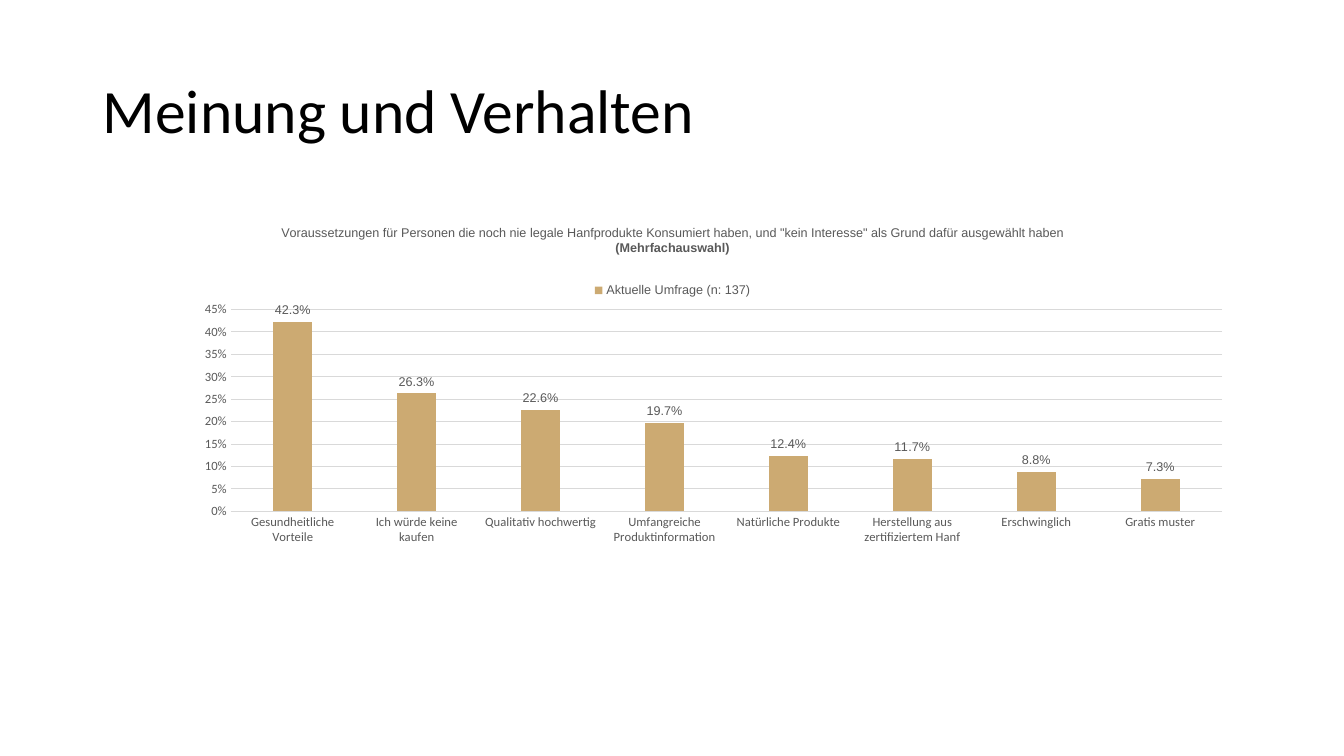
from lxml.etree import SubElement
from pptx import Presentation
from pptx.chart.data import CategoryChartData as ChartData
from pptx.dml.color import RGBColor as Rgb
from pptx.enum.chart import XL_CHART_TYPE as Kind, XL_LABEL_POSITION as Label
from pptx.enum.chart import XL_LEGEND_POSITION as Side, XL_TICK_MARK as Tick
from pptx.enum.text import MSO_ANCHOR as Anchor
from pptx.oxml.ns import qn
from pptx.util import Inches, Pt

COLORS = {"black": "000000", "gray": "595959", "grid": "D9D9D9", "sand": "CCAA72"}

ANSWERS = {
    "Gesundheitliche Vorteile": 0.423,
    "Ich würde keine kaufen": 0.263,
    "Qualitativ hochwertig": 0.226,
    "Umfangreiche Produktinformation": 0.197,
    "Natürliche Produkte": 0.124,
    "Herstellung aus zertifiziertem Hanf": 0.117,
    "Erschwinglich": 0.088,
    "Gratis muster": 0.073,
}
QUESTION = [
    ("Voraussetzungen für Personen die noch nie legale Hanfprodukte Konsumiert haben, "
     'und "kein Interesse" als Grund dafür ausgewählt haben', False),
    ("(Mehrfachauswahl)", True),
]


class Deck:
    head, body = "Calibri", "Arial"

    def __init__(self, prs):
        self.slide = prs.slides.add_slide(prs.slide_layouts[6])

    def color(self, name):
        return Rgb.from_string(COLORS[name])

    def font(self, font, size, name, color, bold=False):
        font.size, font.name, font.bold = Pt(size), name, bold
        font.color.rgb = self.color(color)

    def rule(self, line):
        line.width = Pt(0.75)
        line.color.rgb = self.color("grid")

    def title(self, text, x, y, w, h):
        box = self.slide.shapes.add_textbox(Inches(x), Inches(y), Inches(w), Inches(h))
        frame = box.text_frame
        frame.word_wrap = True
        frame.vertical_anchor = Anchor.MIDDLE
        para = frame.paragraphs[0]
        para.line_spacing = 0.9
        run = para.add_run()
        run.text = text
        self.font(run.font, 44, self.head, "black")

    def place(self, chart, tag, index, **spots):
        """Fix a chart item at fractions of the chart area."""
        item = chart._chartSpace.find(".//" + qn(f"c:{tag}"))
        for old in item.findall(qn("c:layout")):
            item.remove(old)
        layout = SubElement(item, qn("c:layout"))
        item.insert(index, layout)
        manual = SubElement(layout, qn("c:manualLayout"))
        if tag == "plotArea":
            SubElement(manual, qn("c:layoutTarget")).set("val", "inner")
        for mode in ("xMode", "yMode"):
            SubElement(manual, qn(f"c:{mode}")).set("val", "edge")
        for key, val in spots.items():
            SubElement(manual, qn(f"c:{key}")).set("val", str(val))

    def bars(self, name, answers, question, x, y, w, h):
        data = ChartData(number_format="0.0%")
        data.categories = list(answers)
        data.add_series(name, list(answers.values()))
        chart = self.slide.shapes.add_chart(
            Kind.COLUMN_CLUSTERED, Inches(x), Inches(y), Inches(w), Inches(h), data).chart
        self.font(chart.font, 10, self.head, "black")
        self.caption(chart, question)
        self.legend(chart)
        self.axes(chart)
        self.series(chart.plots[0])
        self.place(chart, "plotArea", 0, x=0.119, y=0.225, w=0.855, h=0.421)

    def caption(self, chart, lines):
        chart.has_title = True
        frame = chart.chart_title.text_frame
        for i, (text, bold) in enumerate(lines):
            para = frame.add_paragraph() if i else frame.paragraphs[0]
            self.font(para.font, 9, self.body, "gray", bold)
            run = para.add_run()
            run.text = text
            self.font(run.font, 9, self.body, "gray", bold)
        self.place(chart, "title", 1, x=0.16, y=0.04)

    def legend(self, chart):
        chart.has_legend = True
        chart.legend.position = Side.TOP
        chart.legend.include_in_layout = False
        self.font(chart.legend.font, 9, self.body, "gray")
        self.place(chart, "legend", 1, x=0.42, y=0.16, w=0.16, h=0.05)

    def axes(self, chart):
        cat, val = chart.category_axis, chart.value_axis
        for axis in (cat, val):
            axis.major_tick_mark = axis.minor_tick_mark = Tick.NONE
            self.font(axis.tick_labels.font, 9, self.head, "gray")
        self.rule(cat.format.line)
        val.format.line.fill.background()
        val.has_major_gridlines = True
        self.rule(val.major_gridlines.format.line)
        val.minimum_scale, val.maximum_scale, val.major_unit = 0, 0.45, 0.05
        val.tick_labels.number_format = "0%"
        val.tick_labels.number_format_is_linked = False

    def series(self, plot):
        plot.gap_width, plot.overlap = 219, -27
        plot.vary_by_categories = False
        fill = plot.series[0].format.fill
        fill.solid()
        fill.fore_color.rgb = self.color("sand")
        plot.has_data_labels = True
        labels = plot.data_labels
        labels.show_value = True
        labels.position = Label.OUTSIDE_END
        labels.number_format = "0.0%"
        labels.number_format_is_linked = False
        self.font(labels.font, 9, self.body, "gray")


def main():
    prs = Presentation()
    prs.slide_width, prs.slide_height = Inches(13.33), Inches(7.5)
    deck = Deck(prs)
    deck.title("Meinung und Verhalten", 0.92, 0.4, 11.5, 1.45)
    deck.bars("Aktuelle Umfrage (n: 137)", ANSWERS, QUESTION, 0.92, 2, 11.5, 4.76)
    prs.save("out.pptx")


if __name__ == "__main__":
    main()
